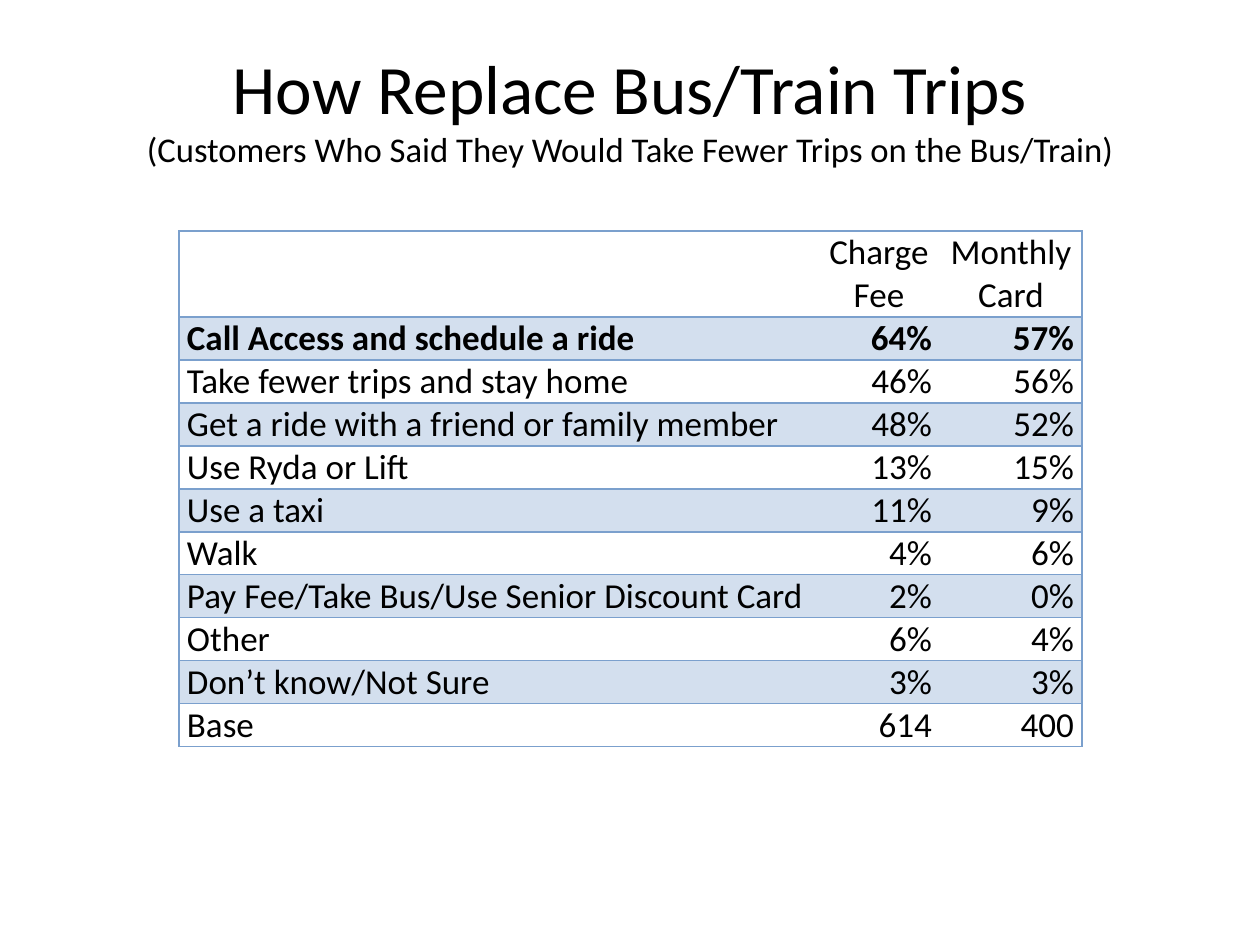
from lxml.etree import SubElement
from pptx import Presentation
from pptx.dml.color import RGBColor
from pptx.enum.text import MSO_ANCHOR, PP_ALIGN
from pptx.oxml.ns import qn
from pptx.util import Pt

EMU_PER_PX = 914400 // 126
FONT = "Calibri"
COLORS = {"text": "000000", "band": "D3DFEE", "border": "7BA0CD"}

TITLE = "How Replace Bus/Train Trips"
SUBTITLE = "(Customers Who Said They Would Take Fewer Trips on the Bus/Train)"
ROWS = [
    ("", "Charge\vFee", "Monthly\vCard"),
    ("Call Access and schedule a ride", "64%", "57%"),
    ("Take fewer trips and stay home", "46%", "56%"),
    ("Get a ride with a friend or family member", "48%", "52%"),
    ("Use Ryda or Lift", "13%", "15%"),
    ("Use a taxi", "11%", "9%"),
    ("Walk", "4%", "6%"),
    ("Pay Fee/Take Bus/Use Senior Discount Card", "2%", "0%"),
    ("Other", "6%", "4%"),
    ("Don’t know/Not Sure", "3%", "3%"),
    ("Base", "614", "400"),
]
COLUMN_WIDTHS = (639, 122, 142)
HEADER_HEIGHT, ROW_HEIGHT = 86, 43
BOLD_ROW = 1


def px(length):
    return length * EMU_PER_PX


def color(name):
    return RGBColor.from_string(COLORS[name])


def format_span(span, size, bold=False):
    span.font.name = FONT
    span.font.size = Pt(size)
    span.font.bold = bold
    span.font.color.rgb = color("text")


def add_title(page):
    box = page.shapes.add_textbox(px(63), px(38), px(1134), px(157))
    frame = box.text_frame
    frame.word_wrap = True
    frame.vertical_anchor = MSO_ANCHOR.TOP
    frame.margin_top = px(7)
    para = frame.paragraphs[0]
    para.text = f"{TITLE}\v{SUBTITLE}"
    para.alignment = PP_ALIGN.CENTER
    for span, size in zip(para.runs, (39.6, 19.8)):
        format_span(span, size)


def set_borders(cell, visible_sides):
    """Border lines must stand before the fill in the cell properties."""
    properties = cell._tc.get_or_add_tcPr()
    for index, side in enumerate("LRTB"):
        line = SubElement(properties, qn(f"a:ln{side}"), w=str(Pt(1)))
        if side in visible_sides:
            fill = SubElement(line, qn("a:solidFill"))
            SubElement(fill, qn("a:srgbClr"), val=COLORS["border"])
        else:
            SubElement(line, qn("a:noFill"))
        properties.insert(index, line)


def fill_cell(cell, text, row, column):
    cell.margin_left = cell.margin_right = px(8)
    cell.margin_top = cell.margin_bottom = 0
    para = cell.text_frame.paragraphs[0]
    para.text = text
    if row == 0:
        para.alignment = PP_ALIGN.CENTER
    else:
        para.alignment = PP_ALIGN.RIGHT if column else PP_ALIGN.LEFT
    for span in para.runs:
        format_span(span, 20, bold=row == BOLD_ROW)

    # Every second row is banded
    if row % 2:
        cell.fill.solid()
        cell.fill.fore_color.rgb = color("band")
    else:
        cell.fill.background()
    outer_sides = {0: "L", len(COLUMN_WIDTHS) - 1: "R"}
    set_borders(cell, "TB" + outer_sides.get(column, ""))


def add_answer_table(page):
    height = HEADER_HEIGHT + ROW_HEIGHT * (len(ROWS) - 1)
    frame = page.shapes.add_table(
        len(ROWS), len(COLUMN_WIDTHS),
        px(179), px(231), px(sum(COLUMN_WIDTHS)), px(height))
    table = frame.table
    table.first_row = table.horz_banding = False
    for column, width in zip(table.columns, COLUMN_WIDTHS):
        column.width = px(width)
    for row, texts in enumerate(ROWS):
        table.rows[row].height = px(ROW_HEIGHT if row else HEADER_HEIGHT)
        for column, text in enumerate(texts):
            fill_cell(table.cell(row, column), text, row, column)


def main():
    deck = Presentation()
    deck.slide_width, deck.slide_height = px(1260), px(945)
    page = deck.slides.add_slide(deck.slide_layouts[6])
    add_title(page)
    add_answer_table(page)
    deck.save("out.pptx")


if __name__ == "__main__":
    main()
